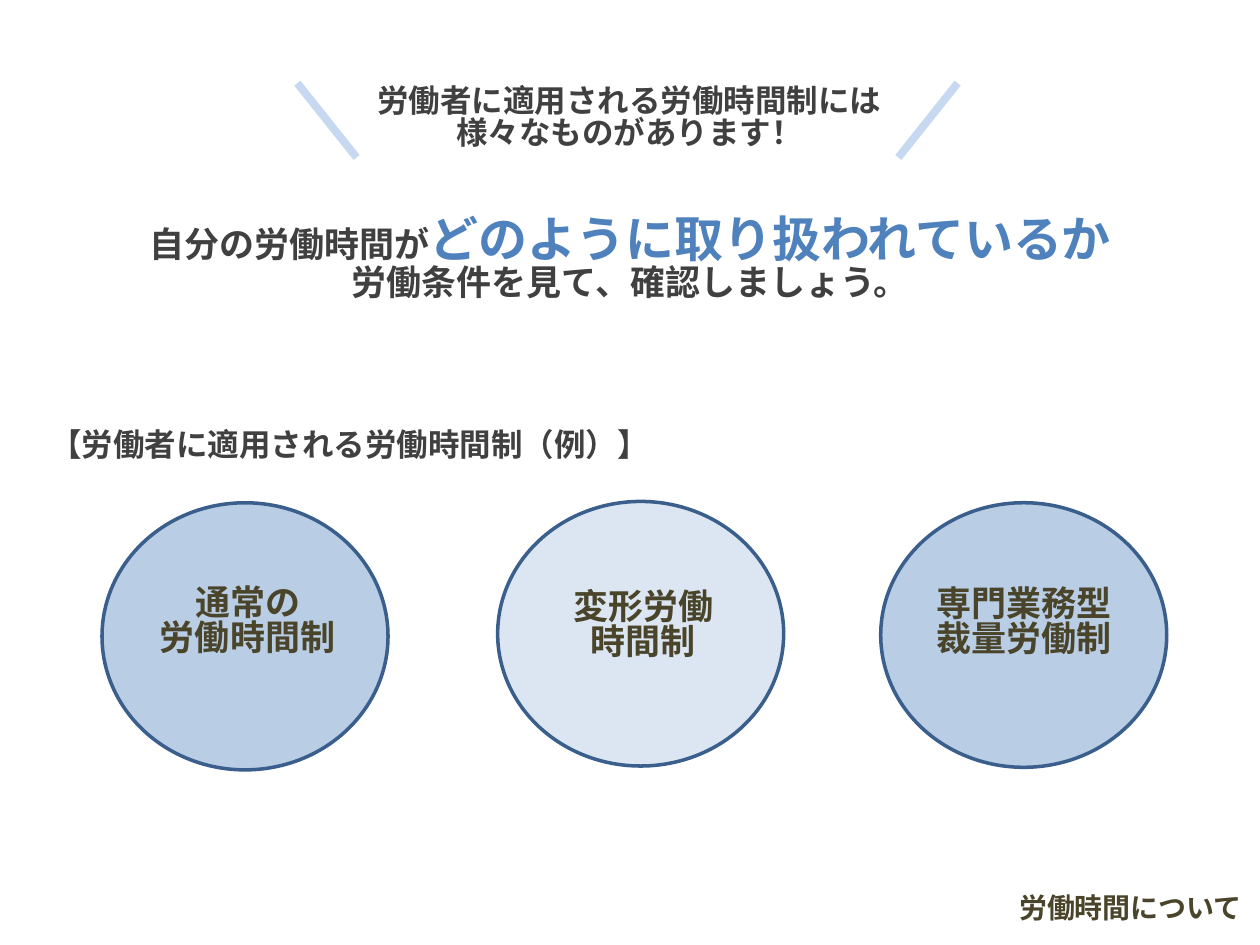
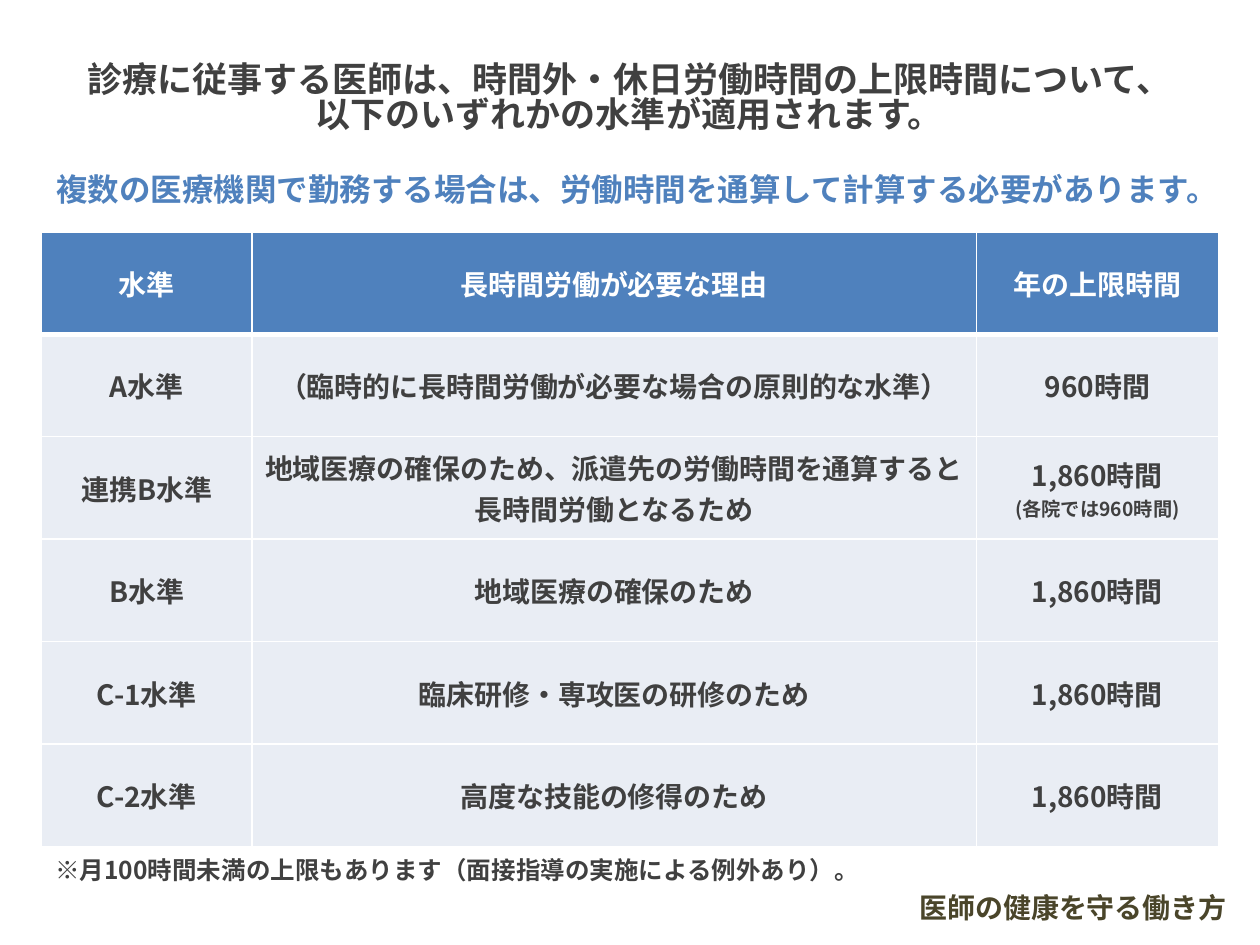
from dataclasses import dataclass

from lxml import etree
from pptx import Presentation
from pptx import util as u
from pptx.dml.color import RGBColor
from pptx.enum import shapes, text
from pptx.oxml import ns


@dataclass(frozen=True)
class Theme:
    """Colours, type sizes and spacing shared by all slides."""
    font: str = "Noto Sans CJK JP"
    ink: str = "404040"
    accent: str = "4F81BD"
    olive: str = "4A452A"
    white: str = "FFFFFF"
    stroke: str = "C6D9F1"
    outline: str = "3A5F8C"
    circle: str = "B9CDE5"
    circle_light: str = "DCE6F2"
    body_row: str = "E9EDF4"
    emphasis: int = 28
    lead: int = 20
    sub: int = 18
    label: int = 16
    note: int = 14
    small: int = 11
    leading: float = 0.84
    footer_leading: float = 0.75


class Deck:
    """Draws styled elements on the current slide, on a grid of 100 by 75."""

    COLUMNS, ROWS = 100, 75

    def __init__(self, theme):
        """Start an empty 10 by 7.5 inch presentation."""
        self.theme = theme
        self.file = Presentation()
        self.file.slide_width, self.file.slide_height = u.Inches(10), u.Inches(7.5)
        self.slide = None

    def new_slide(self):
        """Add a blank slide and make it current."""
        self.slide = self.file.slides.add_slide(self.file.slide_layouts[6])

    def x(self, columns):
        """Turn columns into a length."""
        return round(self.file.slide_width * columns / self.COLUMNS)

    def y(self, rows):
        """Turn rows into a length."""
        return round(self.file.slide_height * rows / self.ROWS)

    def box(self, left, top, width, height):
        """Turn a grid area into lengths."""
        return self.x(left), self.y(top), self.x(width), self.y(height)

    def set_lines(self, frame, lines, size, color, align=text.PP_ALIGN.CENTER, leading=None):
        """Set lines, each a string or a list of (words, size, colour) runs."""
        for number, line in enumerate(lines):
            paragraph = frame.paragraphs[0] if number == 0 else frame.add_paragraph()
            paragraph.alignment = align
            if leading:
                paragraph.line_spacing = leading
            runs = [(line, size, color)] if isinstance(line, str) else line
            for words, points, shade in runs:
                run = paragraph.add_run()
                run.text = words
                look = {"name": self.theme.font, "size": u.Pt(points), "bold": True}
                for key, value in look.items():
                    setattr(run.font, key, value)
                run.font.color.rgb = RGBColor.from_string(shade)
                east_asian = etree.SubElement(run.font._element, ns.qn("a:ea"))
                east_asian.set("typeface", self.theme.font)

    def fill_frame(self, frame, lines, size, color, align, leading):
        """Set the frame's wrapping and margins, then its lines."""
        layout = {"word_wrap": True, "margin_top": u.Inches(0.07),
                  "vertical_anchor": text.MSO_ANCHOR.TOP}
        for key, value in layout.items():
            setattr(frame, key, value)
        self.set_lines(frame, lines, size, color, align, leading)

    def caption(self, area, lines, size, color=None, align=text.PP_ALIGN.CENTER,
                leading=None, into=None):
        """Place a text box on the slide or in a group."""
        holder = into or self.slide
        frame = holder.shapes.add_textbox(*self.box(*area)).text_frame
        self.fill_frame(frame, lines, size, color or self.theme.ink, align,
                        leading or self.theme.leading)
        return frame

    def panel(self, area, lines, size, align=text.PP_ALIGN.CENTER):
        """Place a white rectangle with text."""
        panel = self.slide.shapes.add_shape(shapes.MSO_SHAPE.RECTANGLE, *self.box(*area))
        panel.shadow.inherit = False
        panel.fill.solid()
        panel.fill.fore_color.rgb = RGBColor.from_string(self.theme.white)
        panel.line.fill.background()
        self.fill_frame(panel.text_frame, lines, size, self.theme.ink, align,
                        self.theme.leading)

    def footer(self, left, top, words):
        """Put the topic at the lower right."""
        frame = self.caption((left, top, 99.9 - left, 2.5), [words], self.theme.label,
                             self.theme.olive, text.PP_ALIGN.LEFT,
                             self.theme.footer_leading)
        frame.margin_right = 0

    def stroke(self, start, end):
        """Draw a thick pale line."""
        stroke = self.slide.shapes.add_connector(
            shapes.MSO_CONNECTOR.STRAIGHT, self.x(start[0]), self.y(start[1]),
            self.x(end[0]), self.y(end[1]))
        stroke.line.color.rgb = RGBColor.from_string(self.theme.stroke)
        stroke.line.width = u.Pt(4.5)
        etree.SubElement(stroke._element.spPr, ns.qn("a:effectLst"))

    def circle(self, area, fill, label_area, lines):
        """Draw a labelled ellipse as one group."""
        group = self.slide.shapes.add_group_shape()
        ellipse = group.shapes.add_shape(shapes.MSO_SHAPE.OVAL, *self.box(*area))
        ellipse.shadow.inherit = False
        ellipse.fill.solid()
        ellipse.fill.fore_color.rgb = RGBColor.from_string(fill)
        ellipse.line.color.rgb = RGBColor.from_string(self.theme.outline)
        ellipse.line.width = u.Pt(2)
        self.caption(label_area, lines, self.theme.lead, self.theme.olive, into=group)

    def border(self, cell, bottom):
        """Rule a cell in white, with its own bottom width."""
        widths = {"L": 1, "R": 1, "T": 1, "B": bottom}
        properties = cell._tc.get_or_add_tcPr()
        for place, (side, points) in enumerate(widths.items()):
            line = etree.Element(ns.qn(f"a:ln{side}"), w=str(u.Pt(points)))
            fill = etree.SubElement(line, ns.qn("a:solidFill"))
            etree.SubElement(fill, ns.qn("a:srgbClr"), val=self.theme.white)
            properties.insert(place, line)

    def table(self, area, widths, rows):
        """Build a table with a header row and equal row heights."""
        grid = self.slide.shapes.add_table(len(rows), len(widths), *self.box(*area)).table
        for column, width in zip(grid.columns, widths):
            column.width = self.x(width)
        for r, row in enumerate(rows):
            grid.rows[r].height = self.y(area[3] / len(rows))
            fill, color = ((self.theme.body_row, self.theme.ink) if r
                           else (self.theme.accent, self.theme.white))
            for c, lines in enumerate(row):
                cell = grid.cell(r, c)
                layout = {"vertical_anchor": text.MSO_ANCHOR.MIDDLE,
                          "margin_left": u.Inches(0.09), "margin_right": u.Inches(0.09)}
                for key, value in layout.items():
                    setattr(cell, key, value)
                cell.fill.solid()
                cell.fill.fore_color.rgb = RGBColor.from_string(fill)
                self.border(cell, 1 if r else 3)
                lines = [lines] if isinstance(lines, str) else lines
                self.set_lines(cell.text_frame, lines, self.theme.label, color)


def working_time_systems(deck):
    """Build the slide on working time systems."""
    theme = deck.theme
    deck.new_slide()
    deck.caption((6.1, 16.6, 87.8, 9.1), [
        [("自分の労働時間が", theme.lead, theme.ink),
         ("どのように取り扱われているか", theme.emphasis, theme.accent)],
        "労働条件を見て、確認しましょう。"], theme.lead)
    deck.caption((26, 6.2, 47.9, 7.1),
                 ["労働者に適用される労働時間制には", "様々なものがあります！"], theme.sub)
    for outer, inner in ((23.6, 28.3), (76, 71.3)):
        deck.stroke((outer, 6.6), (inner, 12.5))
    deck.footer(79.9, 70.6, "労働時間について")
    deck.caption((3, 33.5, 70.6, 4), ["【労働者に適用される労働時間制（例）】"],
                 theme.sub, align=text.PP_ALIGN.LEFT)
    systems = [
        (8.1, 39.9, 21.2, theme.circle, (7.4, 45.9, 24.5, 8.7), ["通常の", "労働時間制"]),
        (69.9, 39.9, 21, theme.circle, (70.3, 46, 21.9, 8.7), ["専門業務型", "裁量労働制"]),
        (39.5, 39.8, 21, theme.circle_light, (37.7, 46.2, 26.7, 8.7), ["変形労働", "時間制"]),
    ]
    for left, top, height, fill, label_area, lines in systems:
        deck.circle((left, top, 22.7, height), fill, label_area, lines)


def doctor_limits(deck):
    """Build the slide on overtime limits for doctors."""
    theme = deck.theme
    deck.new_slide()
    deck.panel((3.9, 4.4, 92.1, 8.5),
               ["診療に従事する医師は、時間外・休日労働時間の上限時間について、",
                "以下のいずれかの水準が適用されます。"], theme.lead)
    raised_limit = "1,860時間"
    per_hospital = [("(各院では960時間)", theme.small, theme.ink)]
    deck.table((3.3, 18.4, 93.4, 48.8), (16.7, 57.5, 19.2), [
        ("水準", "長時間労働が必要な理由", "年の上限時間"),
        ("A水準", "（臨時的に長時間労働が必要な場合の原則的な水準）", "960時間"),
        ("連携B水準", "地域医療の確保のため、派遣先の労働時間を通算すると長時間労働となるため",
         [raised_limit, per_hospital]),
        ("B水準", "地域医療の確保のため", raised_limit),
        ("C-1水準", "臨床研修・専攻医の研修のため", raised_limit),
        ("C-2水準", "高度な技能の修得のため", raised_limit),
    ])
    deck.panel((3.4, 67.5, 76.9, 3.4),
               ["※月100時間未満の上限もあります（面接指導の実施による例外あり）。"],
               theme.note, text.PP_ALIGN.LEFT)
    deck.caption((2.2, 13.3, 96.7, 4.3),
                 ["複数の医療機関で勤務する場合は、労働時間を通算して計算する必要があります。"],
                 theme.sub, theme.accent)
    deck.footer(72, 70.6, "医師の健康を守る働き方")


def main():
    """Build and save the slides."""
    deck = Deck(Theme())
    working_time_systems(deck)
    doctor_limits(deck)
    deck.file.save("out.pptx")


if __name__ == "__main__":
    main()
